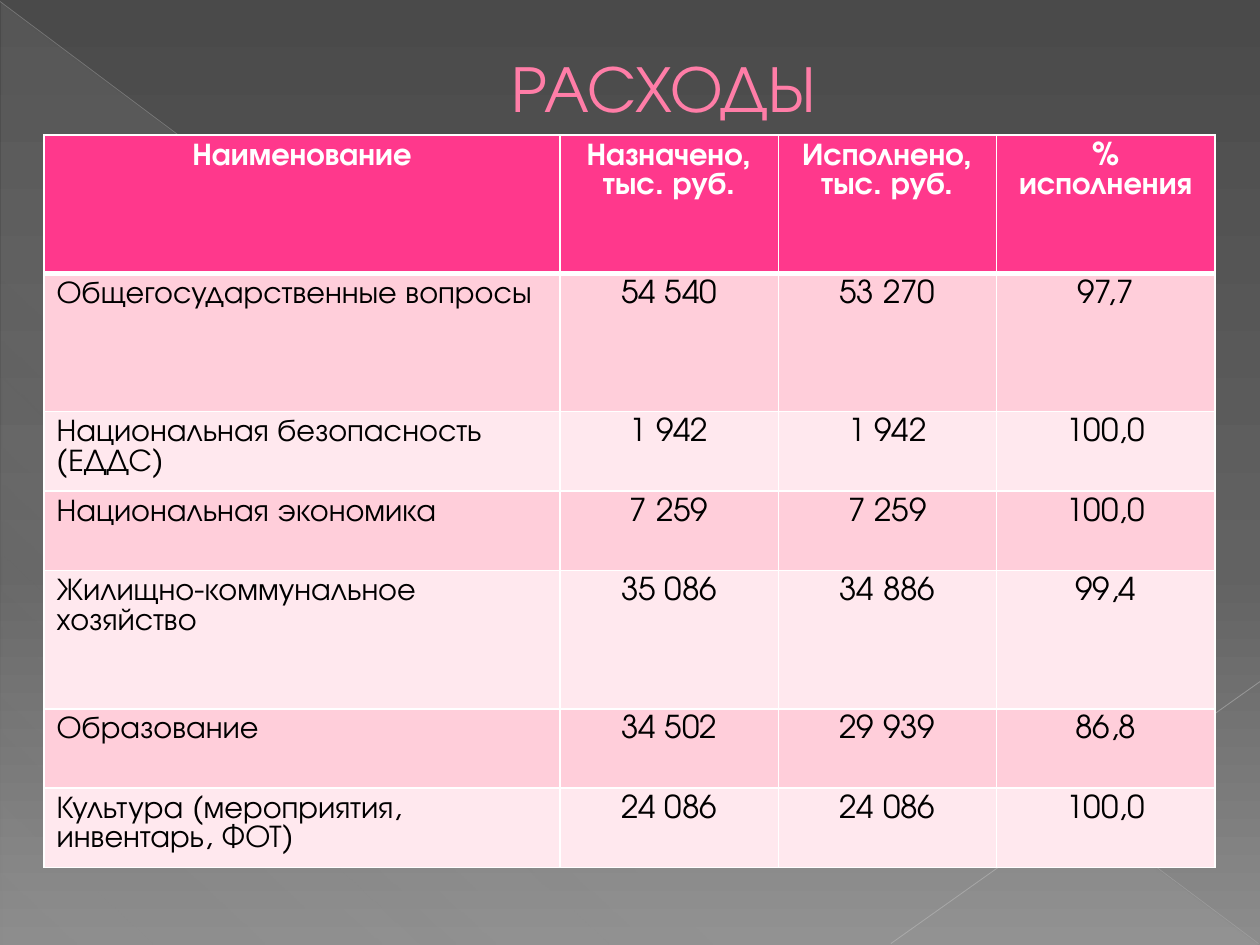
from dataclasses import dataclass

from lxml.etree import SubElement
from pptx import Presentation
from pptx.dml.color import RGBColor
from pptx.enum.shapes import MSO_CONNECTOR, MSO_SHAPE
from pptx.enum.text import MSO_ANCHOR, MSO_AUTO_SIZE, PP_ALIGN
from pptx.oxml.ns import qn
from pptx.util import Cm, Pt

TITLE = "РАСХОДЫ"
HEADER = ("Наименование", "Назначено, тыс. руб.", "Исполнено, тыс. руб.", "% исполнения")
EXPENSES = [
    ("Общегосударственные вопросы", "54 540", "53 270", "97,7"),
    ("Национальная безопасность (ЕДДС)", "1 942", "1 942", "100,0"),
    ("Национальная экономика", "7 259", "7 259", "100,0"),
    ("Жилищно-коммунальное хозяйство", "35 086", "34 886", "99,4"),
    ("Образование", "34 502", "29 939", "86,8"),
    ("Культура (мероприятия, инвентарь, ФОТ)", "24 086", "24 086", "100,0"),
]
COLUMN_WIDTHS = (10.4, 4.4, 4.4, 4.4)
TALL, SHORT = 2.79, 1.6
ROW_HEIGHTS = (TALL, TALL, SHORT, SHORT, TALL, SHORT, SHORT)

# Gradient stops: position %, colour, opacity %
BACKGROUND_STOPS = ((0, "4A4A4A", 100), (60, "626262", 100), (100, "8C8C8C", 100))
TRIANGLE_STOPS = ((0, "D2D2D2", 10), (70, "D2D2D2", 8), (100, "D2D2D2", 1))
# Lines: start x, y, end x, y in cm, colour, width pt, opacity %
DIAGONALS = (
    (0, 0.03, 25.37, 19.02, "BFBFBF", 0.39, 35),
    (25.4, 13.74, 17.96, 19.02, "C6C6C6", 0.47, 45),
)


@dataclass(frozen=True)
class Theme:
    font: str = "TeX Gyre Adventor"
    title_size: float = 37.8
    cell_size: float = 18
    line_pitch: float = 17
    title: str = "FF7DA7"
    title_outline: str = "B12761"
    header_fill: str = "FF388C"
    header_text: str = "FFFFFF"
    text: str = "000000"
    border: str = "FFFFFF"
    bands: tuple = ("FFCEDA", "FFE8EE")


THEME = Theme()


def add_colour(parent, colour, opacity=100):
    element = SubElement(parent, qn("a:srgbClr"), val=colour)
    if opacity < 100:
        SubElement(element, qn("a:alpha"), val=str(opacity * 1000))


def set_gradient(fill, owner, stops, angle):
    """Give fill, held by the element owner, the stops at a clockwise angle."""
    fill.gradient()
    gradient = next(owner.iter(qn("a:gradFill")))
    for child in list(gradient):
        gradient.remove(child)
    stop_list = SubElement(gradient, qn("a:gsLst"))
    for position, colour, opacity in stops:
        stop = SubElement(stop_list, qn("a:gs"), pos=str(position * 1000))
        add_colour(stop, colour, opacity)
    SubElement(gradient, qn("a:lin"), ang=str(angle * 60000), scaled="0")


def add_outline(properties, tag, index, colour, width):
    """Insert a solid line element into text or cell properties."""
    line = SubElement(properties, qn(tag), w=str(Pt(width)))
    add_colour(SubElement(line, qn("a:solidFill")), colour)
    properties.insert(index, line)


def format_run(run, size, colour, bold=False):
    run.font.name = THEME.font
    run.font.size = Pt(size)
    run.font.bold = bold
    run.font.color.rgb = RGBColor.from_string(colour)


def add_decoration(slide):
    set_gradient(slide.background.fill, slide.element, BACKGROUND_STOPS, 90)
    triangle = slide.shapes.add_shape(
        MSO_SHAPE.RIGHT_TRIANGLE, Cm(0.03), Cm(0.05), Cm(25.35), Cm(19))
    triangle.shadow.inherit = False
    triangle.line.fill.background()
    set_gradient(triangle.fill, triangle.element, TRIANGLE_STOPS, 133)
    for *ends, colour, width, opacity in DIAGONALS:
        diagonal = slide.shapes.add_connector(MSO_CONNECTOR.STRAIGHT, *map(Cm, ends))
        diagonal.line.width = Pt(width)
        diagonal.line.color.rgb = RGBColor.from_string(colour)
        line_colour = next(diagonal.element.iter(qn("a:srgbClr")))
        SubElement(line_colour, qn("a:alpha"), val=str(opacity * 1000))
        SubElement(diagonal.element.spPr, qn("a:effectLst"))


def add_title(slide):
    title = slide.shapes.title
    title.left, title.top, title.width, title.height = map(Cm, (1.27, 0.74, 22.86, 1.98))
    frame = title.text_frame
    frame.text = TITLE
    frame.auto_size = MSO_AUTO_SIZE.NONE
    frame.vertical_anchor = MSO_ANCHOR.MIDDLE
    paragraph = frame.paragraphs[0]
    paragraph.alignment = PP_ALIGN.CENTER
    properties = paragraph.font._element.getparent()
    properties.set("marL", str(Cm(1.35)))
    properties.set("indent", "0")
    run = paragraph.runs[0]
    format_run(run, THEME.title_size, THEME.title)
    add_outline(run.font._element, "a:ln", 0, THEME.title_outline, 0.5)
    # Bring the title in front of the decoration
    slide.shapes.element.append(title.element)


def format_cell(cell, row, column):
    is_header = row == 0
    fill = THEME.header_fill if is_header else THEME.bands[(row - 1) % 2]
    cell.fill.solid()
    cell.fill.fore_color.rgb = RGBColor.from_string(fill)
    widths = {"L": 1, "R": 1, "T": 3 if row == 1 else 1, "B": 3 if is_header else 1}
    properties = cell._tc.get_or_add_tcPr()
    for index, (side, width) in enumerate(widths.items()):
        add_outline(properties, f"a:ln{side}", index, THEME.border, width)
    paragraph = cell.text_frame.paragraphs[0]
    paragraph.line_spacing = Pt(THEME.line_pitch)
    centred = is_header or column > 0
    paragraph.alignment = PP_ALIGN.CENTER if centred else PP_ALIGN.LEFT
    colour = THEME.header_text if is_header else THEME.text
    format_run(paragraph.runs[0], THEME.cell_size, colour, is_header)


def add_expense_table(slide):
    rows = [HEADER, *EXPENSES]
    table = slide.shapes.add_table(
        len(rows), len(HEADER), Cm(0.89), Cm(2.72),
        Cm(sum(COLUMN_WIDTHS)), Cm(sum(ROW_HEIGHTS))).table
    for column, width in zip(table.columns, COLUMN_WIDTHS):
        column.width = Cm(width)
    for row, height in zip(table.rows, ROW_HEIGHTS):
        row.height = Cm(height)
    for row_index, values in enumerate(rows):
        for column_index, value in enumerate(values):
            cell = table.cell(row_index, column_index)
            cell.text_frame.text = value
            format_cell(cell, row_index, column_index)


def main():
    presentation = Presentation()
    presentation.slide_width, presentation.slide_height = Cm(25.4), Cm(19.05)
    slide = presentation.slides.add_slide(presentation.slide_layouts[5])
    add_decoration(slide)
    add_title(slide)
    add_expense_table(slide)
    presentation.save("out.pptx")


if __name__ == "__main__":
    main()
